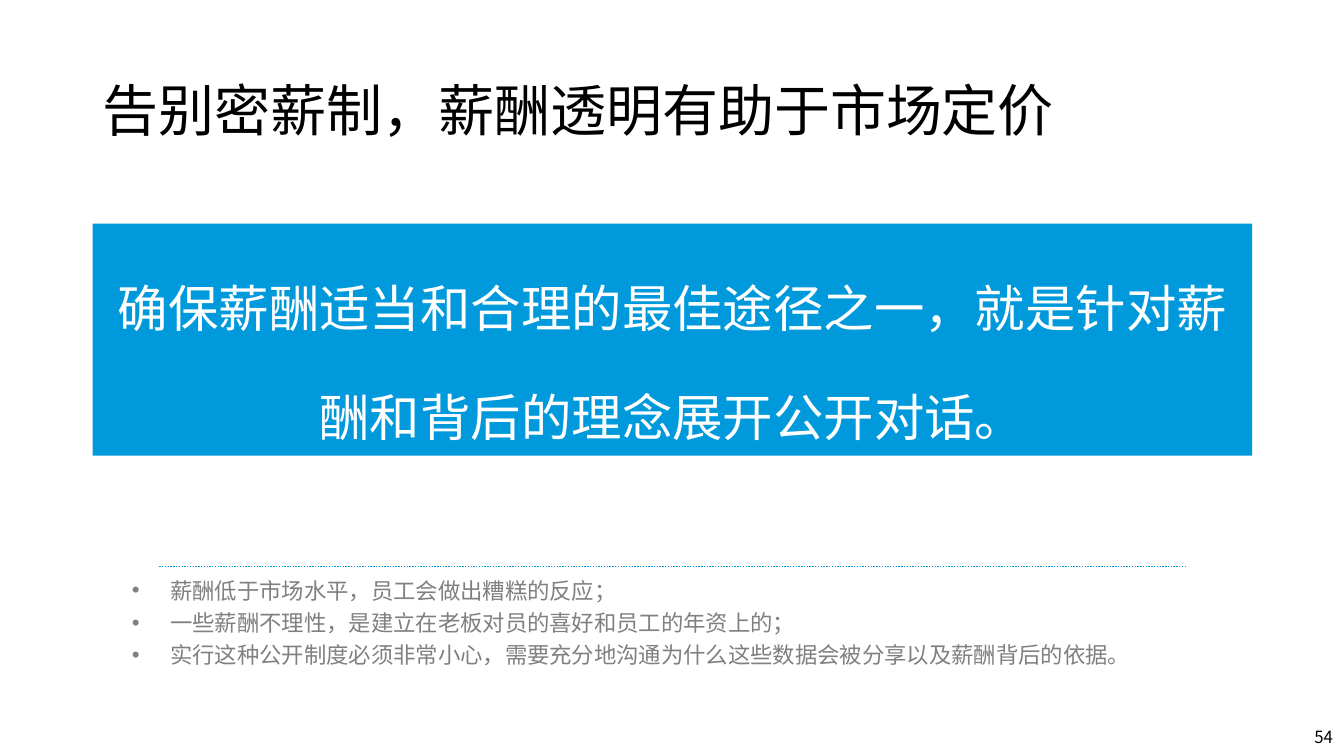
from lxml import etree
from pptx import Presentation
from pptx.dml.color import RGBColor
from pptx.enum import dml, shapes, text
from pptx.oxml.ns import qn
from pptx.util import Inches, Pt

COLORS = {"black": "000000", "gray": "808080", "blue": "009ADC", "white": "FFFFFF"}
POINTS = [
    "薪酬低于市场水平，员工会做出糟糕的反应；",
    "一些薪酬不理性，是建立在老板对员的喜好和员工的年资上的；",
    "实行这种公开制度必须非常小心，需要充分地沟通为什么这些数据会被分享以及薪酬背后的依据。",
]


def write(paragraph, wording, size, color, font="Arial", spacing=1.0, align=text.PP_ALIGN.LEFT):
    paragraph.text = wording
    paragraph.alignment = align
    paragraph.line_spacing = spacing
    paragraph.font.name = font
    paragraph.font.size = Pt(size)
    paragraph.font.color.rgb = RGBColor.from_string(COLORS[color])


def add_box(left, top, width, height, anchor):
    box = slide.shapes.add_textbox(Inches(left), Inches(top), Inches(width), Inches(height))
    box.text_frame.word_wrap = True
    box.text_frame.vertical_anchor = anchor
    return box.text_frame


presentation = Presentation()
presentation.slide_width = Inches(13.33)
presentation.slide_height = Inches(7.5)
slide = presentation.slides.add_slide(presentation.slide_layouts[6])

title = add_box(0.92, 0.4, 11.93, 1.45, text.MSO_ANCHOR.MIDDLE)
write(title.paragraphs[0], "告别密薪制，薪酬透明有助于市场定价", 40, "black", spacing=0.9)

page_number = add_box(10.32, 7.11, 3, 0.4, text.MSO_ANCHOR.MIDDLE)
write(page_number.paragraphs[0], "54", 12, "black", "Noto Sans CJK SC", align=text.PP_ALIGN.RIGHT)

points = add_box(1.21, 5.62, 11.02, 1.07, text.MSO_ANCHOR.TOP)
for index, point in enumerate(POINTS):
    paragraph = points.paragraphs[0] if index == 0 else points.add_paragraph()
    properties = paragraph._p.get_or_add_pPr()
    properties.set("marL", str(Inches(0.38)))
    properties.set("indent", str(-Inches(0.38)))
    etree.SubElement(properties, qn("a:buFont")).set("typeface", "Arial")
    etree.SubElement(properties, qn("a:buChar")).set("char", "•")
    write(paragraph, point, 16, "gray", spacing=1.2)

banner = slide.shapes.add_shape(
    shapes.MSO_SHAPE.RECTANGLE, Inches(0.92), Inches(2.22), Inches(11.5), Inches(2.3))
banner.shadow.inherit = False
banner.fill.solid()
banner.fill.fore_color.rgb = RGBColor.from_string(COLORS["blue"])
banner.line.fill.background()
banner.text_frame.word_wrap = True
banner.text_frame.vertical_anchor = text.MSO_ANCHOR.TOP
write(banner.text_frame.paragraphs[0],
      "确保薪酬适当和合理的最佳途径之一，就是针对薪酬和背后的理念展开公开对话。",
      36, "white", spacing=1.8, align=text.PP_ALIGN.CENTER)

divider = slide.shapes.add_connector(
    shapes.MSO_CONNECTOR.STRAIGHT, Inches(1.58), Inches(5.62), Inches(11.75), Inches(5.62))
divider.line.color.rgb = RGBColor.from_string(COLORS["blue"])
divider.line.width = Pt(1)
divider.line.dash_style = dml.MSO_LINE.ROUND_DOT
etree.SubElement(divider._element.spPr, qn("a:effectLst"))

presentation.save("out.pptx")
